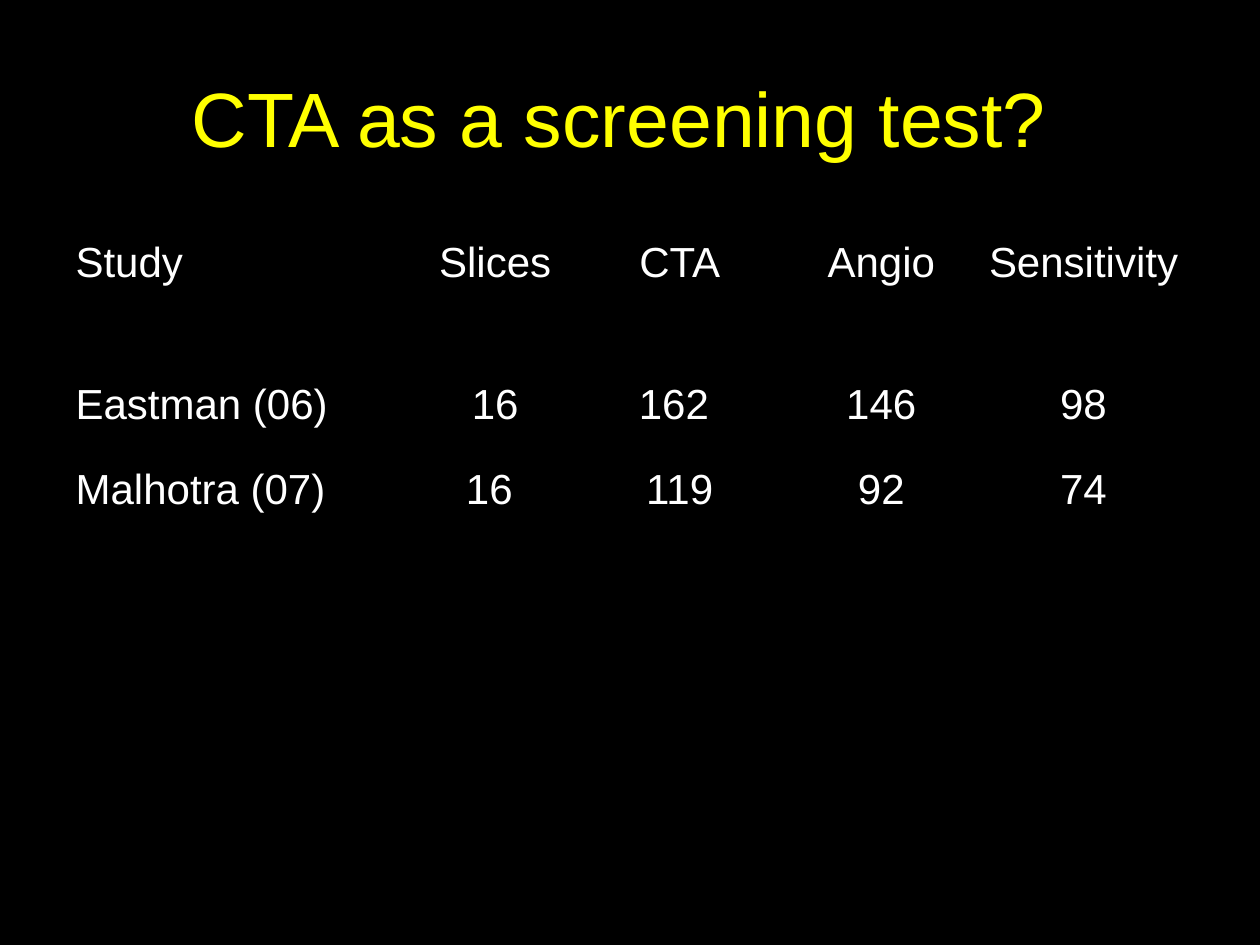
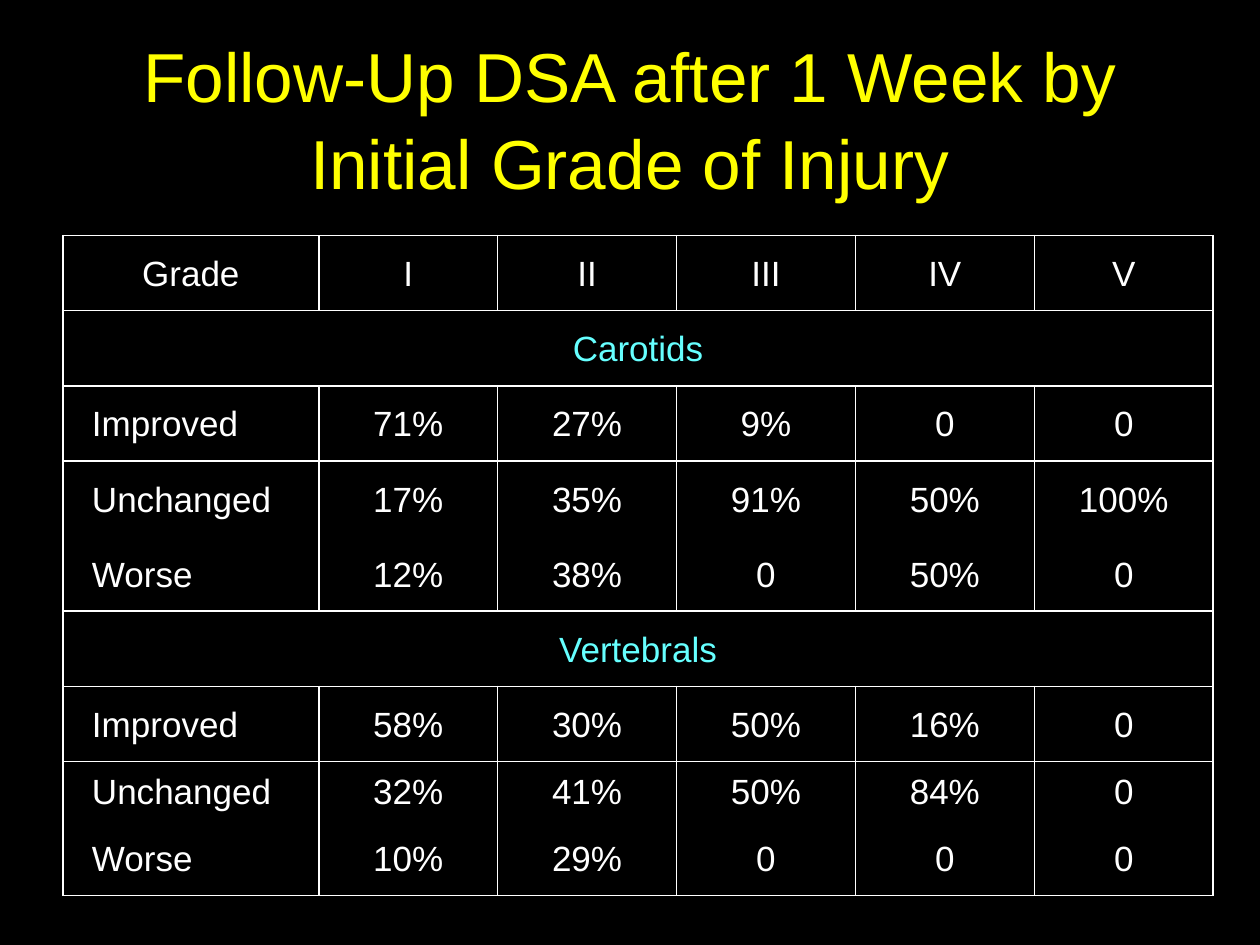
"""Build two slides on CTA screening and follow-up DSA results."""
from lxml import etree
from pptx import Presentation
from pptx.dml.color import RGBColor as RGB
from pptx.enum.text import MSO_ANCHOR as ANCHOR, PP_ALIGN as ALIGN
from pptx.oxml.ns import qn
from pptx.util import Inches, Pt

C = {"bg": "000000", "title": "FFFF00", "text": "FFFFFF", "band": "66FFFF"}
FONT = "Arial"
NO_STYLE = "{2D5ABB26-0587-4C30-8999-92F81FD0307C}"

prs = Presentation()
prs.slide_width, prs.slide_height = Inches(10), Inches(7.5)
W, H = prs.slide_width, prs.slide_height


def put(tf, text, size, color="text", align=ALIGN.CENTER, line=None, after=None):
    p = tf.paragraphs[0]
    p.alignment, p.line_spacing = align, line
    if after:
        p.space_after = Pt(after)
    r = p.add_run()
    r.text = text
    r.font.size, r.font.name = Pt(size), FONT
    r.font.color.rgb = RGB.from_string(C[color])


def add_grid(s, top, cols, rows):
    gf = s.shapes.add_table(len(rows), len(cols), int(W * 0.05), Inches(top),
                            Inches(sum(cols)), Inches(sum(rows)))
    tbl = gf.table
    tbl.first_row = tbl.horz_banding = False
    gf._element.find(".//" + qn("a:tableStyleId")).text = NO_STYLE
    for col, w in zip(tbl.columns, cols):
        col.width = Inches(w)
    for row, h in zip(tbl.rows, rows):
        row.height = Inches(h)
    for cell in tbl.iter_cells():
        cell.vertical_anchor = ANCHOR.MIDDLE
        cell.fill.background()
    return tbl


slides = []
for title, size, line in [
    ("CTA as a screening test? ", 44, None),
    ("Follow-Up DSA after 1 Week by Initial Grade of Injury", 39.6, 1.04),
]:
    s = prs.slides.add_slide(prs.slide_layouts[6])
    s.background.fill.solid()
    s.background.fill.fore_color.rgb = RGB.from_string(C["bg"])
    tf = s.shapes.add_textbox(int(W * 0.05), int(H * 0.04), int(W * 0.9), int(H / 6)).text_frame
    tf.word_wrap, tf.vertical_anchor = True, ANCHOR.MIDDLE
    put(tf, title, size, "title", line=line)
    slides.append(s)

studies = {
    0: ["Study", "Slices", "CTA", "Angio", "Sensitivity"],
    2: ["Eastman (06)", "16", "162 ", "146", "98"],
    3: ["Malhotra (07)", "16 ", "119", "92", "74"],
}
tbl = add_grid(slides[0], 1.75, [2.86, 1.14, 1.79, 1.41, 1.8], [0.67, 0.46] + [0.67] * 6)
for i, values in studies.items():
    for j, text in enumerate(values):
        put(tbl.cell(i, j).text_frame, text, 24, align=ALIGN.CENTER if j else ALIGN.LEFT)

grades = [
    ["Grade", "I", "II", "III", "IV", "V"],
    ["Carotids"],
    ["Improved", "71%", "27%", "9%", "0", "0"],
    ["Unchanged", "17%", "35%", "91%", "50%", "100%"],
    ["Worse", "12%", "38%", "0", "50%", "0"],
    ["Vertebrals"],
    ["Improved", "58%", "30%", "50%", "16%", "0"],
    ["Unchanged", "32%", "41%", "50%", "84%", "0"],
    ["Worse", "10%", "29%", "0", "0", "0"],
]
heights = [(5.24 - 0.47) / 8] * 9
heights[7] = 0.47
tbl = add_grid(slides[1], 1.87, [2.03] + [1.42] * 5, heights)
last = len(tbl.columns) - 1
for i, values in enumerate(grades):
    band = len(values) == 1
    if band:
        tbl.cell(i, 0).merge(tbl.cell(i, last))
    for j in range(last + 1):
        cell = tbl.cell(i, j)
        sides = "LR" if not band or j == 0 else "R" if j == last else ""
        if i == 0 or band:
            sides += "TB"
        elif values[0] == "Worse":
            sides += "B"
        elif values[0] == "Improved":
            sides += "T"
        tcPr = cell._tc.get_or_add_tcPr()
        for k, side in enumerate(x for x in "LRTB" if x in sides):
            ln = etree.Element(qn("a:ln" + side), w=str(Pt(1)))
            fill = etree.SubElement(ln, qn("a:solidFill"))
            etree.SubElement(fill, qn("a:srgbClr"), val=C["text"])
            tcPr.insert(k, ln)
        if j < len(values):
            label = j == 0 and i > 0 and not band
            cell.margin_left = Inches(0.23 if label else 0.07)
            cell.margin_right = Inches(0.07)
            cell.margin_top = cell.margin_bottom = 0
            put(cell.text_frame, values[j], 20, "band" if band else "text",
                ALIGN.LEFT if label else ALIGN.CENTER, line=1.07, after=8)

prs.save("out.pptx")
